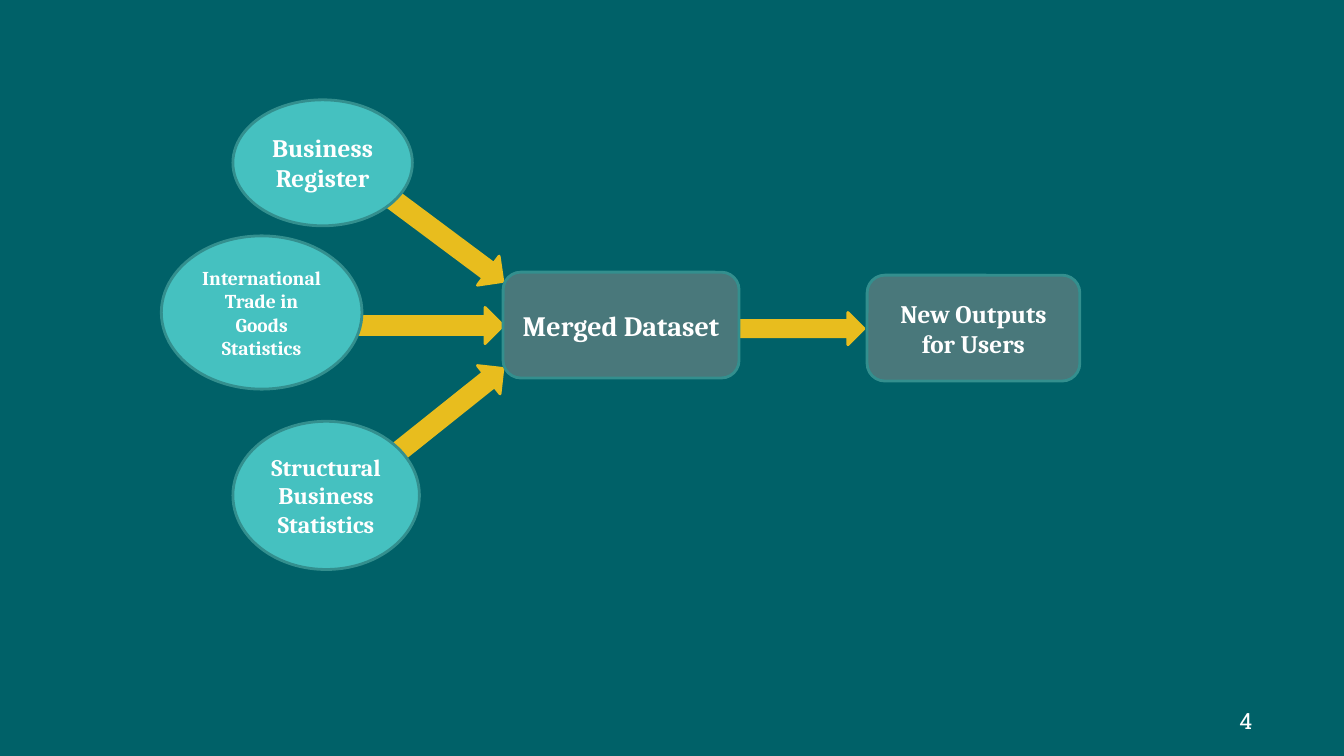
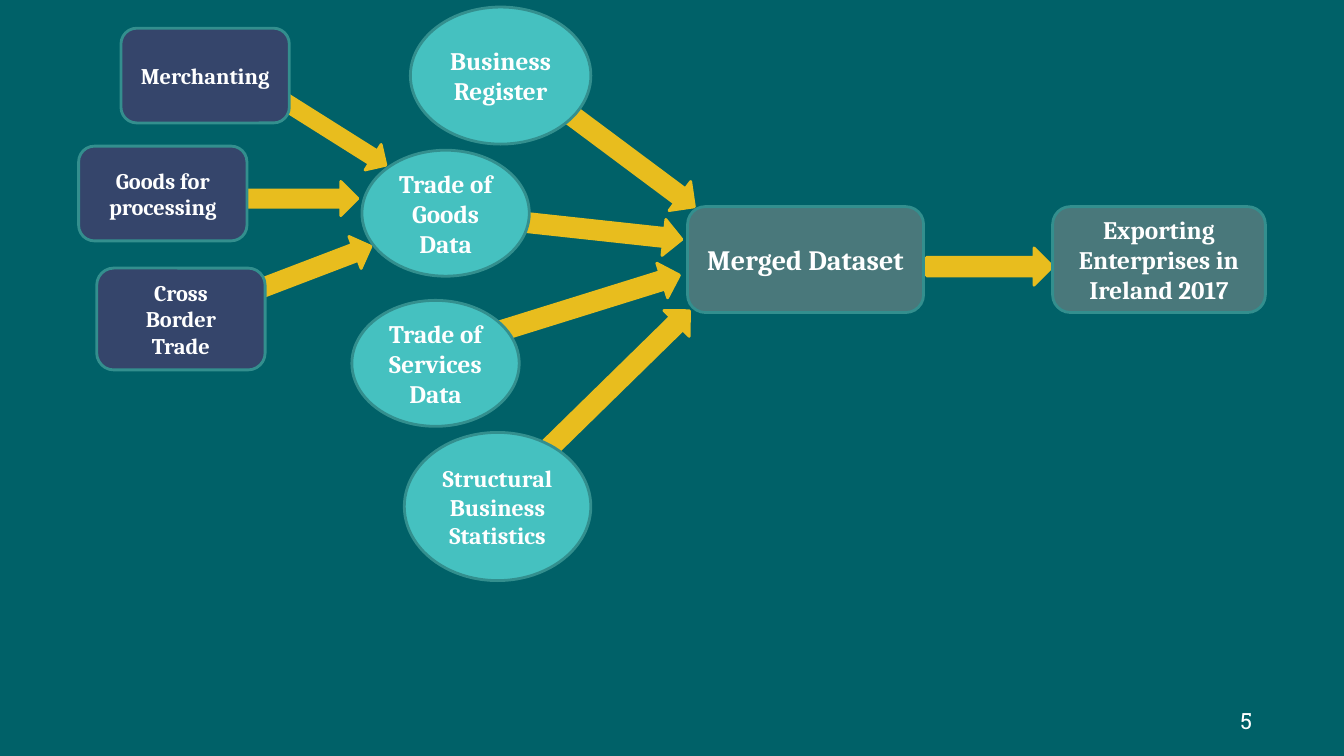
"""Build two slides showing how data sources merge into new statistical outputs."""
from pptx import Presentation, util as u
from pptx.dml import color
from pptx.enum import shapes, text

TEAL, AQUA, EDGE = "006168", "45C1C0", "338F8E"
SLATE, NAVY, GOLD, WHITE = "49787B", "35456B", "E8BD1E", "FFFFFF"
BUSINESS_REGISTER = "Business Register"
STRUCTURAL = "Structural Business Statistics"
MERGED = "Merged Dataset"


def paint(target, hex_color):
    """Give a fill a solid colour."""
    target.solid()
    target.fore_color.rgb = color.RGBColor.from_string(hex_color)


def write(frame, words, size, font="Cambria", bold=True, align="CENTER",
          inset=(0.1, 0.05)):
    """Fill a text frame with one formatted paragraph."""
    frame.word_wrap = True
    frame.vertical_anchor = text.MSO_ANCHOR.MIDDLE
    frame.margin_left = frame.margin_right = u.Inches(inset[0])
    frame.margin_top = frame.margin_bottom = u.Inches(inset[1])
    paragraph = frame.paragraphs[0]
    paragraph.alignment = text.PP_ALIGN[align]
    run = paragraph.add_run()
    run.text = words
    run.font.name, run.font.size, run.font.bold = font, u.Pt(size), bold
    paint(run.font.fill, WHITE)


class Deck:
    """Hold the shared style and the current slide."""

    def __init__(self):
        """Set the slide size and the shared background."""
        self.show = Presentation()
        self.show.slide_width = u.Inches(13.33)
        self.show.slide_height = u.Inches(7.5)
        paint(self.show.slide_master.background.fill, TEAL)
        self.slide = None

    def start(self, number):
        """Begin a slide with its page number."""
        self.slide = self.show.slides.add_slide(self.show.slide_layouts[6])
        corner = self.slide.shapes.add_textbox(
            *map(u.Inches, (11.08, 6.95, 1.47, 0.4)))
        write(corner.text_frame, str(number), 16, font="Roboto Slab",
              bold=False, align="RIGHT", inset=(0.13, 0.07))

    def figure(self, kind, box, fill, edge):
        """Add a flat preset shape with an outline."""
        figure = self.slide.shapes.add_shape(
            shapes.MSO_SHAPE[kind], *map(u.Inches, box))
        figure.shadow.inherit = False
        paint(figure.fill, fill)
        paint(figure.line.fill, edge)
        figure.line.width = u.Pt(2)
        return figure

    def arrow(self, left, top, width, height=0.36, turn=0):
        """Add a gold arrow, turned clockwise in degrees."""
        box = left, top, width, height
        self.figure("RIGHT_ARROW", box, GOLD, GOLD).rotation = turn

    def source(self, words, left, top, width, height, size=18):
        """Add an ellipse naming a data source."""
        oval = self.figure("OVAL", (left, top, width, height), AQUA, EDGE)
        write(oval.text_frame, words, size)

    def block(self, words, left, top, width, height, size, fill, side=0.1):
        """Add a rounded box with centred words."""
        box = left, top, width, height
        block = self.figure("ROUNDED_RECTANGLE", box, fill, EDGE)
        write(block.text_frame, words, size, inset=(side, 0.05))

    def merged(self, left, top):
        """Add the merged dataset box."""
        self.block(MERGED, left, top, 2.34, 1.05, 20, SLATE)

    def output(self, words, left, top):
        """Add a result box."""
        self.block(words, left, top, 2.11, 1.05, 18, SLATE)

    def component(self, words, left, top, height=0.94, side=0.1):
        """Add a navy box for a component of the goods data."""
        self.block(words, left, top, 1.67, height, 16, NAVY, side)


def outputs_slide(deck):
    """Show three sources merging into new outputs."""
    deck.start(4)
    deck.arrow(3.14, 2, 2.05, turn=36.7)
    deck.arrow(3.54, 3.05, 1.45)
    deck.arrow(2.69, 4.28, 2.58, turn=321.4)
    deck.arrow(7.33, 3.1, 1.24, 0.32)
    deck.source(BUSINESS_REGISTER, 2.31, 0.99, 1.78, 1.25)
    deck.source(STRUCTURAL, 2.31, 4.18, 1.85, 1.47, size=17)
    deck.source("International Trade in Goods Statistics",
                1.6, 2.34, 1.99, 1.52, size=14)
    deck.merged(4.99, 2.7)
    deck.output("New Outputs for Users", 8.6, 2.73)


def exporters_slide(deck):
    """Show the wider set of sources behind the exporter results."""
    deck.start(5)
    deck.arrow(2.72, 1.17, 1.2, 0.3, turn=32.2)
    deck.arrow(2.31, 1.8, 1.24, 0.34)
    deck.arrow(2.51, 2.49, 1.21, 0.34, turn=339.1)
    deck.arrow(5.04, 1.26, 2.05, turn=36.7)
    deck.arrow(4.81, 2.09, 1.96, turn=6.2)
    deck.arrow(4.57, 2.88, 2.22, turn=342.7)
    deck.arrow(4.91, 3.69, 2.25, turn=315.6)
    deck.arrow(9.19, 2.46, 1.25, 0.37)
    deck.component("Merchanting", 1.2, 0.28)
    deck.component("Goods for processing", 0.78, 1.45)
    deck.component("Cross Border Trade", 0.96, 2.66, height=1.01, side=0.32)
    deck.source(BUSINESS_REGISTER, 4.07, 0.07, 1.79, 1.36)
    deck.source(STRUCTURAL, 4.01, 4.29, 1.85, 1.47, size=17)
    deck.source("Trade of Services Data", 3.49, 2.98, 1.66, 1.25)
    deck.source("Trade of Goods Data", 3.59, 1.49, 1.66, 1.25)
    deck.merged(6.82, 2.05)
    deck.output("Exporting Enterprises in Ireland 2017", 10.44, 2.05)


def main():
    """Build and save the slides."""
    deck = Deck()
    outputs_slide(deck)
    exporters_slide(deck)
    deck.show.save("out.pptx")


if __name__ == "__main__":
    main()
